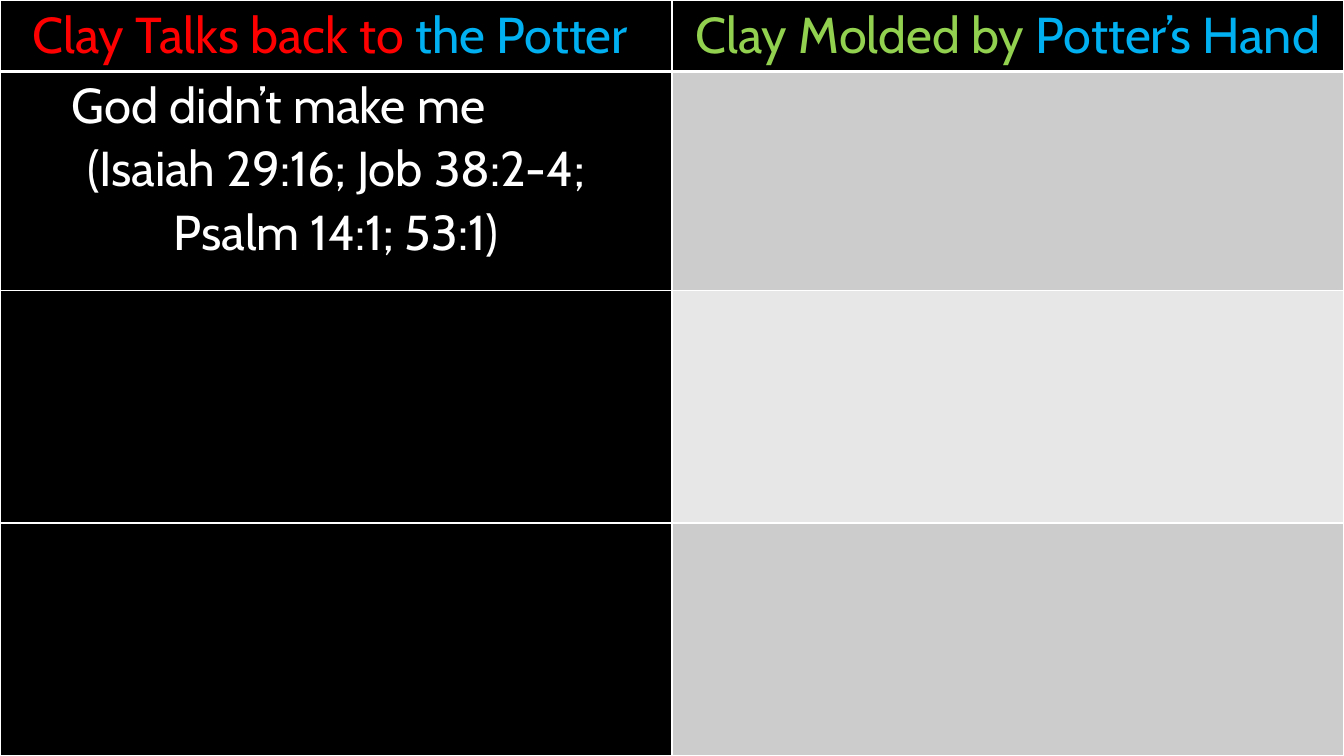
import pptx
import pptx.dml.color
import pptx.enum.text
import pptx.oxml.ns
import pptx.util
from dataclasses import dataclass
from lxml import etree

ALIGN = pptx.enum.text.PP_ALIGN


@dataclass(frozen=True)
class Theme:
    font: str = "Cabin"
    heading_size: float = 36
    body_size: float = 35
    black: str = "000000"
    white: str = "FFFFFF"
    red: str = "FF0000"
    blue: str = "00B0F0"
    green: str = "92D050"
    dark_band: str = "CCCCCC"
    light_band: str = "E7E7E7"
    line_spacing: float = 1.07
    rule: float = 1
    heading_rule: float = 3


THEME = Theme()
SLIDE_WIDTH, SLIDE_HEIGHT = pptx.util.Inches(13.33), pptx.util.Inches(7.5)
ROW_WEIGHTS = (0.71, 2.17, 2.31, 2.31)
ROW_FILLS = (
    (THEME.black, THEME.black),
    (THEME.black, THEME.dark_band),
    (THEME.black, THEME.light_band),
    (THEME.black, THEME.dark_band),
)
HEADINGS = (
    (("Clay Talks back to ", THEME.red), ("the Potter ", THEME.blue)),
    (("Clay Molded by ", THEME.green), ("Potter’s Hand", THEME.blue)),
)


def rgb(value):
    return pptx.dml.color.RGBColor.from_string(value)


def add_text(paragraph, text, *, size, color, align=ALIGN.CENTER, indent=0):
    paragraph.alignment = align
    paragraph.line_spacing = THEME.line_spacing
    if indent:
        properties = paragraph._p.get_or_add_pPr()
        properties.set("marL", str(pptx.util.Inches(indent)))
        properties.set("indent", "0")
    run = paragraph.add_run()
    run.text = text
    run.font.name = THEME.font
    run.font.size = pptx.util.Pt(size)
    run.font.color.rgb = rgb(color)


def style_cell(cell, fill, top, bottom):
    cell.margin_left = cell.margin_right = pptx.util.Inches(0.07)
    cell.margin_top = cell.margin_bottom = 0
    cell.fill.solid()
    cell.fill.fore_color.rgb = rgb(fill)
    # Border lines come before the fill in the cell properties
    properties = cell._tc.get_or_add_tcPr()
    sides = (("L", THEME.rule), ("R", THEME.rule), ("T", top), ("B", bottom))
    for position, (side, width) in enumerate(sides):
        line = etree.Element(pptx.oxml.ns.qn(f"a:ln{side}"), w=str(pptx.util.Pt(width)))
        solid = etree.SubElement(line, pptx.oxml.ns.qn("a:solidFill"))
        etree.SubElement(solid, pptx.oxml.ns.qn("a:srgbClr"), val=THEME.white)
        properties.insert(position, line)


def fill_headings(table):
    for column, phrases in enumerate(HEADINGS):
        paragraph = table.cell(0, column).text_frame.paragraphs[0]
        for text, color in phrases:
            add_text(paragraph, text, size=THEME.heading_size, color=color)


def fill_denial(cell):
    body = {"size": THEME.body_size, "color": THEME.white}
    frame = cell.text_frame
    add_text(frame.paragraphs[0], "God didn’t make me", align=ALIGN.LEFT, indent=0.64, **body)
    for reference in ("(Isaiah 29:16; Job 38:2-4;", "Psalm 14:1; 53:1)"):
        add_text(frame.add_paragraph(), reference, **body)


def add_comparison(slide, left, top, width, height):
    # Grid of two equal columns and weighted rows
    table = slide.shapes.add_table(len(ROW_WEIGHTS), 2, left, top, width, height).table
    for column in table.columns:
        column.width = width // 2
    for row, weight in zip(table.rows, ROW_WEIGHTS):
        row.height = int(height * weight / sum(ROW_WEIGHTS))

    # Fills and rules, heavier below the headings
    for row, fills in enumerate(ROW_FILLS):
        above = THEME.heading_rule if row == 1 else THEME.rule
        below = THEME.heading_rule if row == 0 else THEME.rule
        for column, fill in enumerate(fills):
            style_cell(table.cell(row, column), fill, above, below)

    # Wording
    fill_headings(table)
    fill_denial(table.cell(1, 0))


def main():
    deck = pptx.Presentation()
    deck.slide_width, deck.slide_height = SLIDE_WIDTH, SLIDE_HEIGHT
    slide = deck.slides.add_slide(deck.slide_layouts[6])
    slide.background.fill.solid()
    slide.background.fill.fore_color.rgb = rgb(THEME.black)
    add_comparison(slide, 0, 0, SLIDE_WIDTH, SLIDE_HEIGHT)
    deck.save("out.pptx")


if __name__ == "__main__":
    main()
